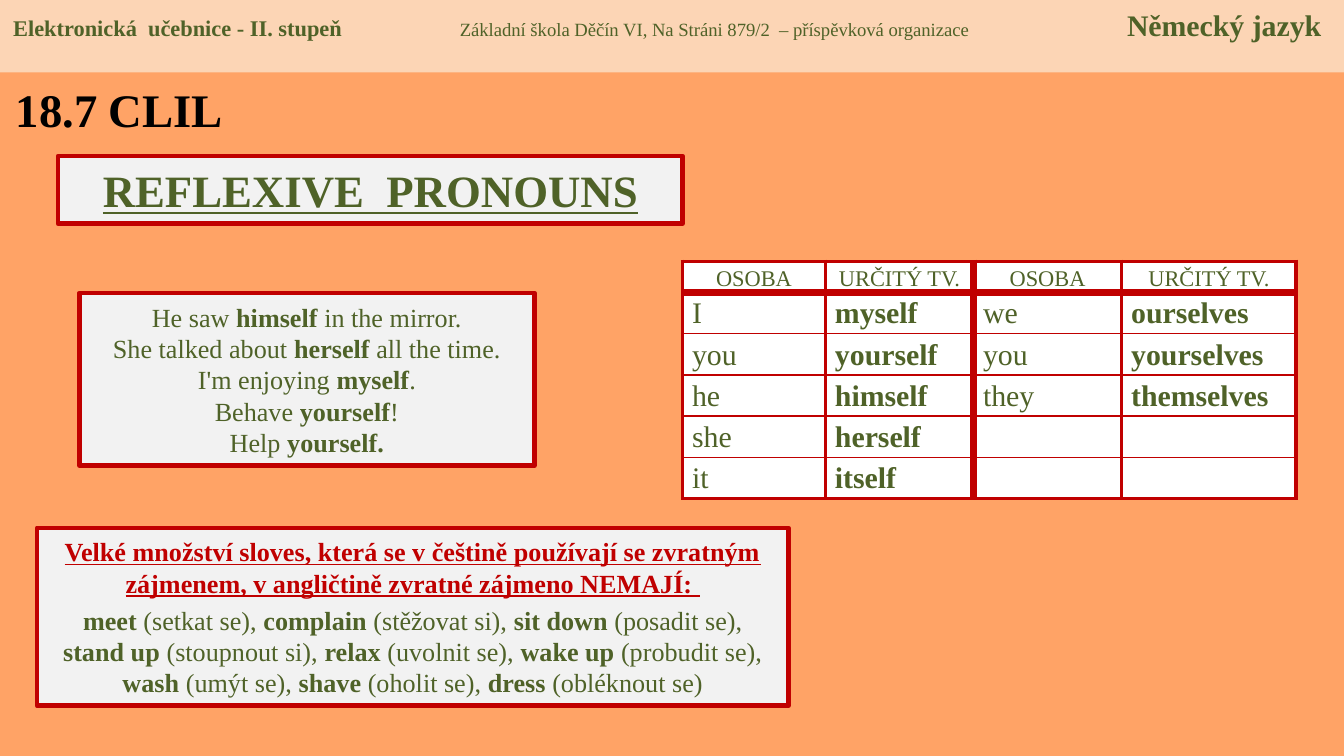
import lxml.etree
import pptx
import pptx.dml.color
import pptx.enum.shapes
import pptx.enum.text
import pptx.oxml.ns
import pptx.util

Cm = pptx.util.Cm
Pt = pptx.util.Pt
RGBColor = pptx.dml.color.RGBColor
Align = pptx.enum.text.PP_ALIGN
Anchor = pptx.enum.text.MSO_ANCHOR
qn = pptx.oxml.ns.qn

ORANGE = RGBColor(0xFF, 0xA3, 0x66)
PEACH = RGBColor(0xFC, 0xD5, 0xB5)
GRAY = RGBColor(0xF2, 0xF2, 0xF2)
WHITE = RGBColor(0xFF, 0xFF, 0xFF)
BLACK = RGBColor(0x00, 0x00, 0x00)
RED = RGBColor(0xC0, 0x00, 0x00)
GREEN = RGBColor(0x4F, 0x62, 0x28)

PRONOUNS = [
    ["OSOBA", "URČITÝ TV.", "OSOBA", "URČITÝ TV."],
    ["I", "*myself*", "we", "*ourselves*"],
    ["you", "*yourself*", "you", "*yourselves*"],
    ["he", "*himself*", "they", "*themselves*"],
    ["she", "*herself*", "", ""],
    ["it", "*itself*", "", ""],
]
EXAMPLES = [
    "He saw *himself* in the mirror.",
    "She talked about *herself* all the time.",
    "I'm enjoying *myself*.",
    "Behave *yourself*!",
    "Help *yourself.*",
]
RULE = (
    "*Velké množství sloves, která se v češtině používají se zvratným "
    "zájmenem, v angličtině zvratné zájmeno NEMAJÍ: *"
)
VERBS = (
    "*meet *(setkat se), *complain *(stěžovat si), *sit down *(posadit se), "
    "*stand up *(stoupnout si), *relax *(uvolnit se), *wake up *(probudit se), "
    "*wash *(umýt se), *shave *(oholit se), *dress *(obléknout se)"
)


def write(paragraph, text, size=14, color=GREEN, underline=False, font="Times New Roman"):
    for index, part in enumerate(text.split("*")):
        if part:
            run = paragraph.add_run()
            run.text = part
            run.font.name = font
            run.font.size = Pt(size)
            run.font.color.rgb = color
            run.font.bold = index % 2 == 1
            run.font.underline = underline


class SlideBuilder:
    line_width = Pt(2.5)
    vertical_borders = [2.25, 1.5, 4.5, 1.5, 2.25]
    horizontal_borders = [2.25, 4.5, 1, 1, 1, 1, 2.25]

    def __init__(self, slide):
        self.slide = slide
        slide.background.fill.solid()
        slide.background.fill.fore_color.rgb = ORANGE

    def rectangle(self, left, top, width, height, fill):
        shape = self.slide.shapes.add_shape(
            pptx.enum.shapes.MSO_SHAPE.RECTANGLE, Cm(left), Cm(top), Cm(width), Cm(height)
        )
        shape.shadow.inherit = False
        shape.fill.solid()
        shape.fill.fore_color.rgb = fill
        shape.line.fill.background()
        shape.text_frame.word_wrap = True
        return shape

    def header(self, height, parts, tab_stops):
        shape = self.rectangle(0, 0, 25.4, height, PEACH)
        shape.text_frame.vertical_anchor = Anchor.TOP
        paragraph = shape.text_frame.paragraphs[0]
        paragraph.alignment = Align.LEFT
        properties = paragraph._p.get_or_add_pPr()
        tabs = lxml.etree.SubElement(properties, qn("a:tabLst"))
        for stop in tab_stops:
            lxml.etree.SubElement(tabs, qn("a:tab"), pos=str(Cm(stop)), algn="l")
        for text, size in parts:
            write(paragraph, text, size=size)

    def title(self, left, top, width, height, text):
        shape = self.slide.shapes.add_textbox(Cm(left), Cm(top), Cm(width), Cm(height))
        shape.text_frame.word_wrap = False
        write(shape.text_frame.paragraphs[0], text, size=25, color=BLACK)

    def framed_box(self, left, top, width, height, lines, space_after=0):
        shape = self.rectangle(left, top, width, height, GRAY)
        shape.line.color.rgb = RED
        shape.line.width = self.line_width
        frame = shape.text_frame
        frame.vertical_anchor = Anchor.MIDDLE
        for index, (text, style) in enumerate(lines):
            paragraph = frame.add_paragraph() if index else frame.paragraphs[0]
            paragraph.alignment = Align.CENTER
            if space_after and index < len(lines) - 1:
                paragraph.space_after = Pt(space_after)
            write(paragraph, text, **style)

    def borders(self, cell, row, column):
        widths = {
            "a:lnL": self.vertical_borders[column],
            "a:lnR": self.vertical_borders[column + 1],
            "a:lnT": self.horizontal_borders[row],
            "a:lnB": self.horizontal_borders[row + 1],
        }
        properties = cell._tc.get_or_add_tcPr()
        for index, (tag, width) in enumerate(widths.items()):
            line = lxml.etree.Element(qn(tag), w=str(Pt(width)))
            fill = lxml.etree.SubElement(line, qn("a:solidFill"))
            lxml.etree.SubElement(fill, qn("a:srgbClr"), val=str(RED))
            properties.insert(index, line)

    def table(self, left, top, column_widths, row_heights, rows):
        table = self.slide.shapes.add_table(
            len(rows), len(column_widths), Cm(left), Cm(top),
            Cm(sum(column_widths)), Cm(sum(row_heights)),
        ).table
        table.first_row = False
        table.horz_banding = False
        for column, width in zip(table.columns, column_widths):
            column.width = Cm(width)
        for row_index, texts in enumerate(rows):
            table.rows[row_index].height = Cm(row_heights[row_index])
            for column_index, text in enumerate(texts):
                cell = table.cell(row_index, column_index)
                self.cell(cell, text, row_index == 0)
                self.borders(cell, row_index, column_index)

    def cell(self, cell, text, is_heading):
        cell.fill.solid()
        cell.fill.fore_color.rgb = WHITE
        cell.margin_left = cell.margin_right = Cm(0.18)
        cell.margin_top = cell.margin_bottom = 0
        cell.vertical_anchor = Anchor.MIDDLE if is_heading else Anchor.TOP
        paragraph = cell.text_frame.paragraphs[0]
        paragraph.alignment = Align.CENTER if is_heading else Align.LEFT
        paragraph.line_spacing = 1.15
        if text:
            write(paragraph, text, size=12 if is_heading else 16)
        else:
            lxml.etree.SubElement(paragraph._p, qn("a:endParaRPr"), sz="1200")


def main():
    presentation = pptx.Presentation()
    presentation.slide_width = Cm(25.4)
    presentation.slide_height = Cm(14.29)
    builder = SlideBuilder(presentation.slides.add_slide(presentation.slide_layouts[6]))
    builder.title(0.05, 1.4, 4.47, 1.32, "*18.7 CLIL*")
    builder.framed_box(
        1.1, 2.95, 11.8, 1.28, [("*REFLEXIVE  PRONOUNS*", {"size": 24, "underline": True})]
    )
    builder.header(
        1.37,
        [
            ("*Elektronická  učebnice - II. stupeň\t*", 12),
            ("Základní škola Děčín VI, Na Stráni 879/2  – příspěvková organizace\t", 10),
            ("*Německý jazyk*", 16),
        ],
        [8.44, 21.05],
    )
    builder.table(12.9, 4.94, [2.7, 2.8, 2.8, 3.3], [0.58] + [0.78] * 5, PRONOUNS)
    builder.framed_box(
        0.7, 9.98, 14.2, 3.36,
        [(RULE, {"color": RED, "underline": True}), (VERBS, {})],
        space_after=3,
    )
    builder.framed_box(1.5, 5.54, 8.6, 3.26, [(line, {}) for line in EXAMPLES])
    presentation.save("out.pptx")


if __name__ == "__main__":
    main()
